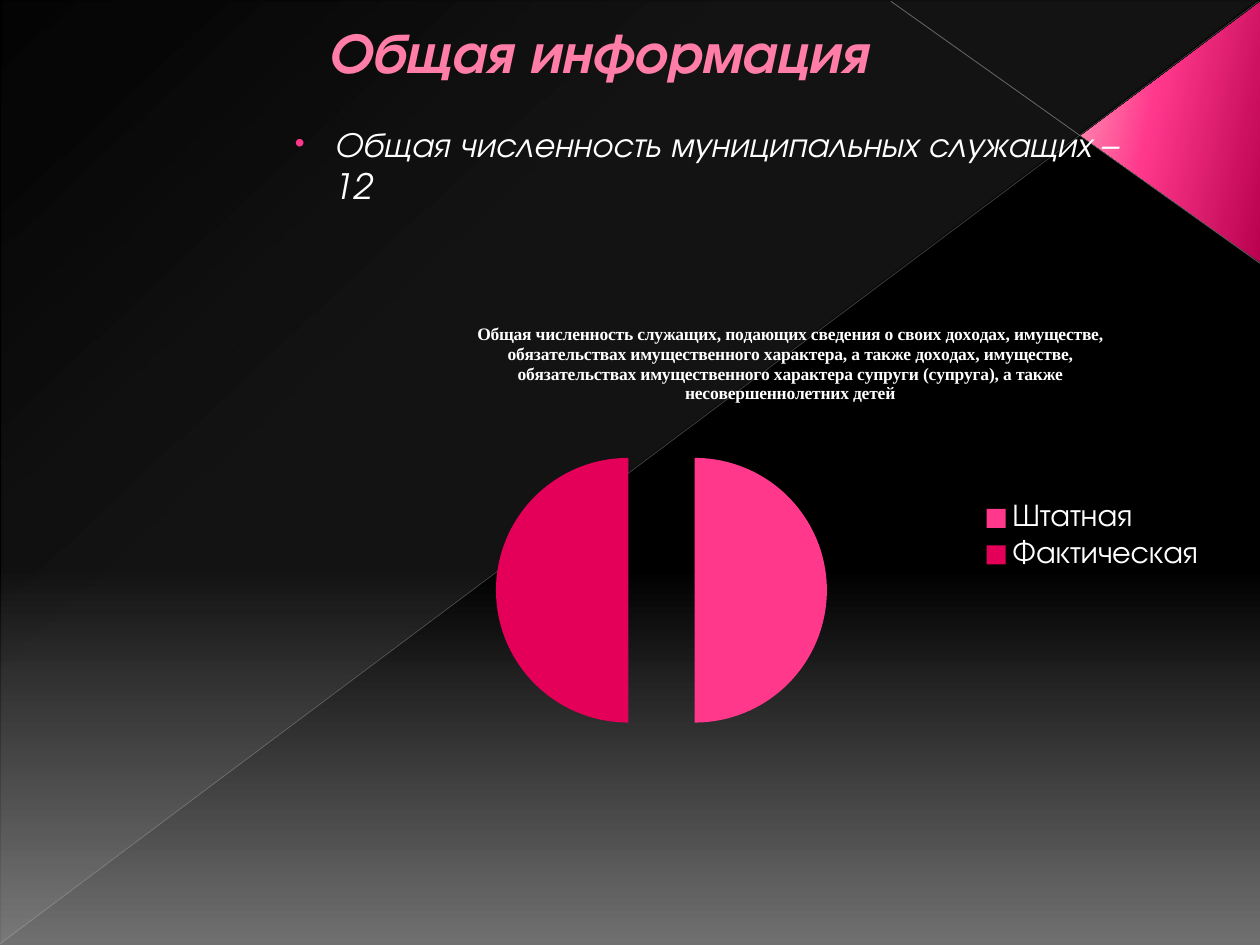
"""Build the general information slide with a pie chart of staff numbers."""
from dataclasses import dataclass

from lxml.etree import SubElement
from pptx import Presentation
from pptx.chart.data import CategoryChartData
from pptx.dml.color import RGBColor
from pptx.enum.chart import XL_CHART_TYPE as ChartType, XL_LEGEND_POSITION as LegendPosition
from pptx.enum.shapes import MSO_CONNECTOR as Connector, MSO_SHAPE as Shape
from pptx.enum.text import MSO_ANCHOR as Anchor, MSO_AUTO_SIZE as AutoSize, PP_ALIGN as Align
from pptx.oxml.ns import qn
from pptx.util import Inches, Pt


@dataclass(frozen=True)
class Theme:
    font: str = "TeX Gyre Adventor"
    chart_title_font: str = "Times New Roman"
    white: str = "FFFFFF"
    heading: str = "FF7DA7"
    heading_edge: str = "B12761"
    pink: str = "FF388C"
    crimson: str = "E40059"
    backdrop: tuple = ((0, "000000", 100), (60, "000000", 100), (100, "707070", 100))
    veil: tuple = ((0, "D2D2D2", 10), (70, "D2D2D2", 8), (100, "D2D2D2", 1))
    corner: tuple = ((0, "B8014E", 100), (60, "FF388C", 100), (100, "FF9CB9", 100))
    heading_size: float = 32.4
    body_size: float = 20
    legend_size: float = 18
    chart_title_size: float = 10


def blend(fill, root, stops, angle):
    """Give a fill a linear gradient of (position, colour, opacity) stops."""
    fill.gradient()
    gradient = root.find(".//" + qn("a:gradFill"))
    for child in list(gradient):
        gradient.remove(child)
    gradient.set("rotWithShape", "1")
    stop_list = SubElement(gradient, qn("a:gsLst"))
    for position, colour, opacity in stops:
        stop = SubElement(stop_list, qn("a:gs"), pos=str(position * 1000))
        tint = SubElement(stop, qn("a:srgbClr"), val=colour)
        SubElement(tint, qn("a:alpha"), val=str(opacity * 1000))
    SubElement(gradient, qn("a:lin"), ang=str(angle * 60000), scaled="0")


def style(font, colour, **values):
    """Set a font's colour and its other format values."""
    for name, value in values.items():
        setattr(font, name, value)
    font.color.rgb = RGBColor.from_string(colour)


theme = Theme()
deck = Presentation()
deck.slide_width, deck.slide_height = Inches(10), Inches(7.5)
page = deck.slides.add_slide(deck.slide_layouts[1])
title, body = page.placeholders
blend(page.background.fill, page.element, theme.backdrop, 90)

triangles = [
    (Shape.RIGHT_TRIANGLE, (0.01, 0.01, 9.98, 7.48), 0, theme.veil, 133),
    (Shape.ISOSCELES_TRIANGLE, (8.26, 0.34, 2.07, 1.42), 90, theme.corner, 258),
]
for kind, place, turn, stops, angle in triangles:
    triangle = page.shapes.add_shape(kind, *map(Inches, place))
    triangle.rotation = turn
    triangle.element.spPr.find(qn("a:xfrm")).set("flipV", "1")
    triangle.shadow.inherit = False
    triangle.line.fill.background()
    blend(triangle.fill, triangle.element, stops, angle)
triangle.adjustments[0] = 0.513

diagonals = [
    ((10, 2.09, 7.07, 0.01), "C6C6C6", 0.47, 45),
    ((0, 7.49, 9.99, 0.01), "BFBFBF", 0.39, 35),
]
for ends, colour, width, opacity in diagonals:
    diagonal = page.shapes.add_connector(Connector.STRAIGHT, *map(Inches, ends))
    diagonal.line.width = Pt(width)
    diagonal.line.color.rgb = RGBColor.from_string(colour)
    tint = diagonal.element.find(".//" + qn("a:ln")).find(".//" + qn("a:srgbClr"))
    SubElement(tint, qn("a:alpha"), val=str(opacity * 1000))
    SubElement(diagonal.element.spPr, qn("a:effectLst"))

texts = [
    (title, (2.5, 0.13, 6.75, 0.55), Anchor.MIDDLE, "Общая информация",
     theme.heading, {"size": Pt(theme.heading_size), "bold": True}),
    (body, (2.24, 0.92, 6.75, 0.79), Anchor.TOP, "Общая численность муниципальных служащих – 12",
     theme.white, {"size": Pt(theme.body_size)}),
]
for box, place, anchor, words, colour, values in texts:
    box.element.getparent().append(box.element)
    box.left, box.top, box.width, box.height = map(Inches, place)
    frame = box.text_frame
    for name, value in {"word_wrap": True, "auto_size": AutoSize.NONE, "vertical_anchor": anchor}.items():
        setattr(frame, name, value)
    para = frame.paragraphs[0]
    para.alignment = Align.LEFT
    span = para.add_run()
    span.text = words
    style(span.font, colour, name=theme.font, italic=True, **values)

heading_format = title.text_frame.paragraphs[0].runs[0].font
edge = SubElement(title.element.find(".//" + qn("a:rPr")), qn("a:ln"), w=str(Pt(0.5)))
SubElement(SubElement(edge, qn("a:solidFill")), qn("a:srgbClr"), val=theme.heading_edge)
edge.getparent().insert(0, edge)

bullet = body.text_frame.paragraphs[0]._p.get_or_add_pPr()
bullet.set("marL", str(Inches(0.31)))
bullet.set("indent", str(Inches(-0.31)))
SubElement(SubElement(bullet, qn("a:spcBef")), qn("a:spcPct"), val="20000")
SubElement(SubElement(bullet, qn("a:buClr")), qn("a:srgbClr"), val=theme.pink)
SubElement(bullet, qn("a:buSzPct"), val="80000")
SubElement(bullet, qn("a:buChar"), char="•")

caption = (
    "Общая численность служащих, подающих сведения о своих доходах, имуществе, "
    "обязательствах имущественного характера, а также доходах, имуществе, "
    "обязательствах имущественного характера супруги (супруга), а также "
    "несовершеннолетних детей"
)
staff = CategoryChartData()
staff.categories = ["Штатная", "Фактическая"]
staff.add_series(caption, (50, 50))
place = map(Inches, (2.87, 2.41, 6.8, 3.7))
chart = page.shapes.add_chart(ChartType.PIE, *place, staff).chart
style(chart.font, theme.white, name=theme.font, size=Pt(theme.legend_size))

chart.has_title = True
chart.chart_title.include_in_layout = False
para = chart.chart_title.text_frame.paragraphs[0]
span = para.add_run()
span.text = caption
style(span.font, theme.white, name=theme.chart_title_font, size=Pt(theme.chart_title_size), bold=True)

chart.has_legend = True
chart.legend.position = LegendPosition.RIGHT
chart.legend.include_in_layout = False
style(chart.legend.font, theme.white, name=theme.font, size=Pt(theme.legend_size))

plot = chart.plots[0]
plot.vary_by_categories = True
series = plot.series[0]
for index, colour in enumerate((theme.pink, theme.crimson)):
    slice_fill = series.points[index].format.fill
    slice_fill.solid()
    slice_fill.fore_color.rgb = RGBColor.from_string(colour)
root = series._element
explosion = SubElement(root, qn("c:explosion"), val="25")
root.find(qn("c:tx")).addnext(explosion)

area = chart.element.find(".//" + qn("c:plotArea"))
layout = area.find(qn("c:layout"))
if layout is None:
    layout = SubElement(area, qn("c:layout"))
    area.insert(0, layout)
manual = SubElement(layout, qn("c:manualLayout"))
settings = {"layoutTarget": "inner", "xMode": "edge", "yMode": "edge",
            "x": 0.02, "y": 0.26, "w": 0.66, "h": 0.71}
for name, value in settings.items():
    SubElement(manual, qn("c:" + name), val=str(value))

deck.save("out.pptx")
